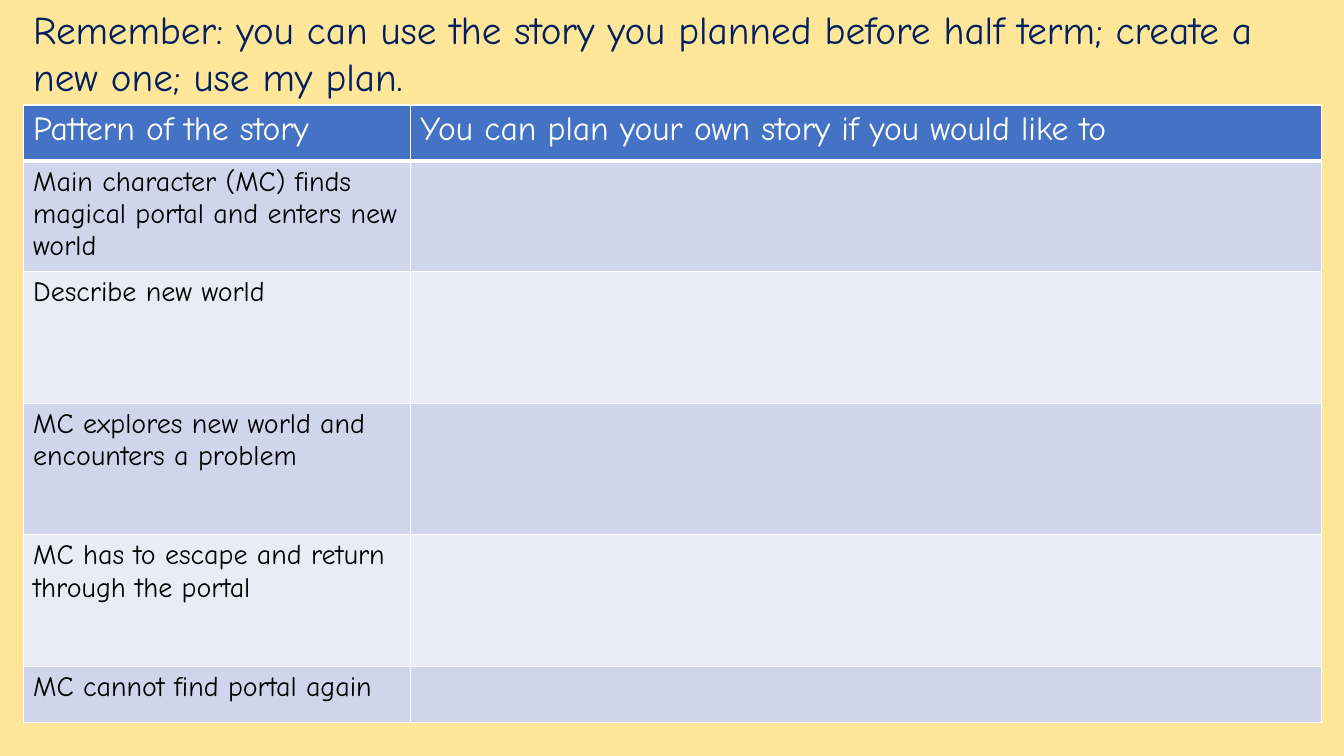
"""Build a story planning slide with a reminder and a planning table."""
from lxml import etree
from pptx import Presentation
from pptx.dml.color import RGBColor
from pptx.enum import text
from pptx.oxml import ns
from pptx.util import Pt

REMINDER = ("Remember: you can use the story you planned before half term; "
            "create a new one; use my plan.")
ROWS = [
    ("Pattern of the story", "You can plan your own story if you would like to", 40),
    ("Main character (MC) finds magical portal and enters new world", "", 79),
    ("Describe new world", "", 94),
    ("MC explores new world and encounters a problem", "", 94),
    ("MC has to escape and return through the portal", "", 94),
    ("MC cannot find portal again", "", 40),
]
COLUMN_WIDTHS = (276.5, 651)
LEFT, TABLE_TOP = 16.5, 75
FONT = "Comic Neue"
COLORS = {"background": "FFE699", "reminder": "002060", "header": "4472C4",
          "odd": "CFD5EA", "even": "E9EBF5", "white": "FFFFFF", "black": "000000"}


def rgb(name):
    return RGBColor.from_string(COLORS[name])


def write(tf, words, size, color):
    tf.text = words
    p = tf.paragraphs[0]
    p.alignment = text.PP_ALIGN.LEFT
    for r in p.runs:
        r.font.name = FONT
        r.font.size = Pt(size)
        r.font.bold = False
        r.font.color.rgb = rgb(color)


def add_borders(cell, bottom):
    tc_pr = cell._tc.get_or_add_tcPr()
    for side, width in (("L", 1), ("R", 1), ("T", 1), ("B", bottom)):
        ln = etree.SubElement(tc_pr, ns.qn(f"a:ln{side}"), w=str(Pt(width)))
        fill = etree.SubElement(ln, ns.qn("a:solidFill"))
        etree.SubElement(fill, ns.qn("a:srgbClr"), val=COLORS["white"])


def main():
    prs = Presentation()
    prs.slide_width, prs.slide_height = Pt(960), Pt(540)
    s = prs.slides.add_slide(prs.slide_layouts[5])
    s.background.fill.solid()
    s.background.fill.fore_color.rgb = rgb("background")
    width = sum(COLUMN_WIDTHS)

    title = s.shapes.title
    title.left, title.top = Pt(LEFT), Pt(0)
    title.width, title.height = Pt(width), Pt(TABLE_TOP)
    tf = title.text_frame
    tf.word_wrap = True
    tf.auto_size = text.MSO_AUTO_SIZE.NONE
    tf.vertical_anchor = text.MSO_ANCHOR.TOP
    write(tf, REMINDER, 28, "reminder")

    height = sum(row[-1] for row in ROWS)
    table = s.shapes.add_table(len(ROWS), len(COLUMN_WIDTHS), Pt(LEFT), Pt(TABLE_TOP),
                               Pt(width), Pt(height)).table
    for column, column_width in zip(table.columns, COLUMN_WIDTHS):
        column.width = Pt(column_width)
    for i, (*words, row_height) in enumerate(ROWS):
        table.rows[i].height = Pt(row_height)
        header = i == 0
        fill = "header" if header else "odd" if i % 2 else "even"
        for cell, content in zip(table.rows[i].cells, words):
            add_borders(cell, 3 if header else 1)
            cell.fill.solid()
            cell.fill.fore_color.rgb = rgb(fill)
            if content:
                write(cell.text_frame, content, 24 if header else 20,
                      "white" if header else "black")

    prs.save("out.pptx")


if __name__ == "__main__":
    main()
